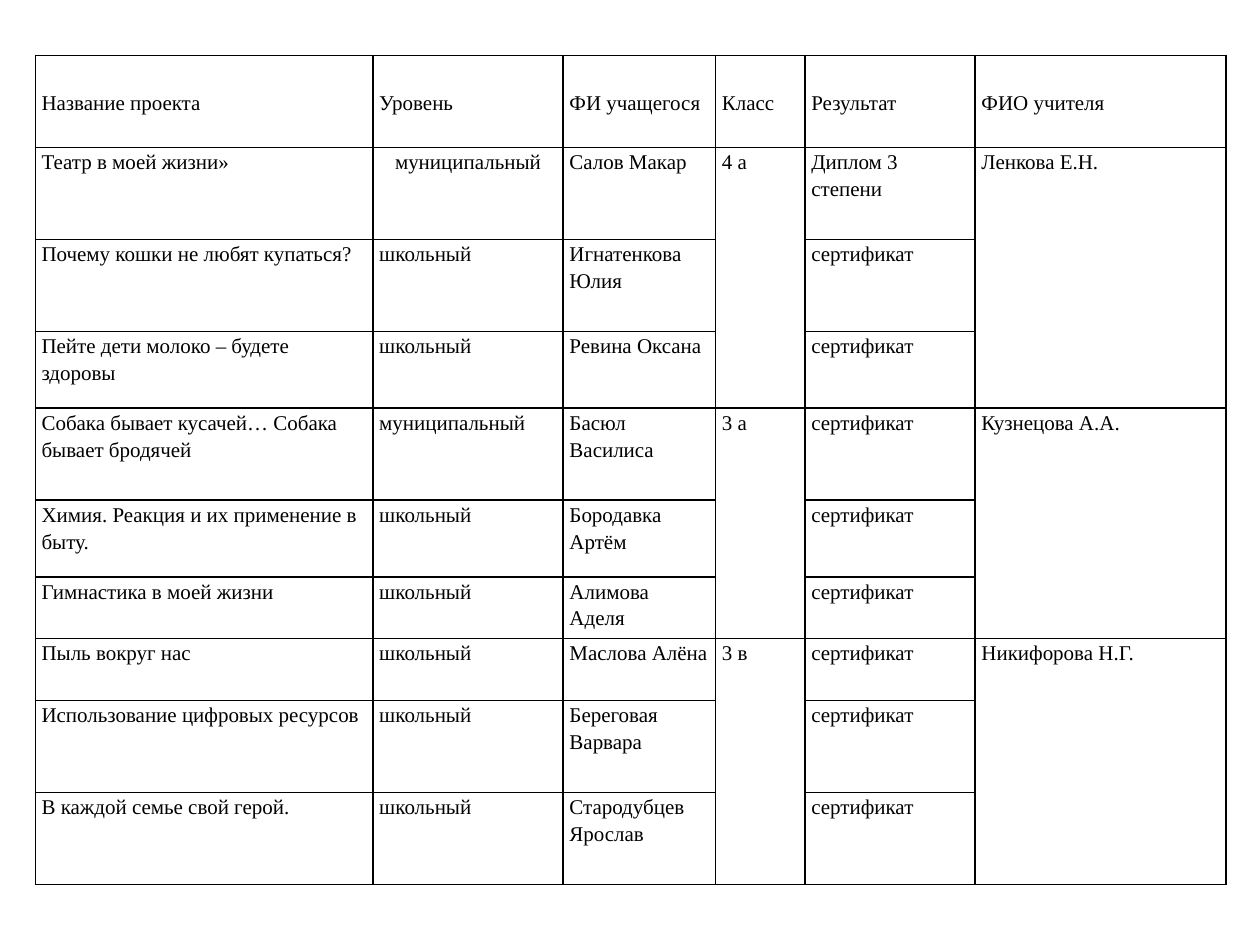
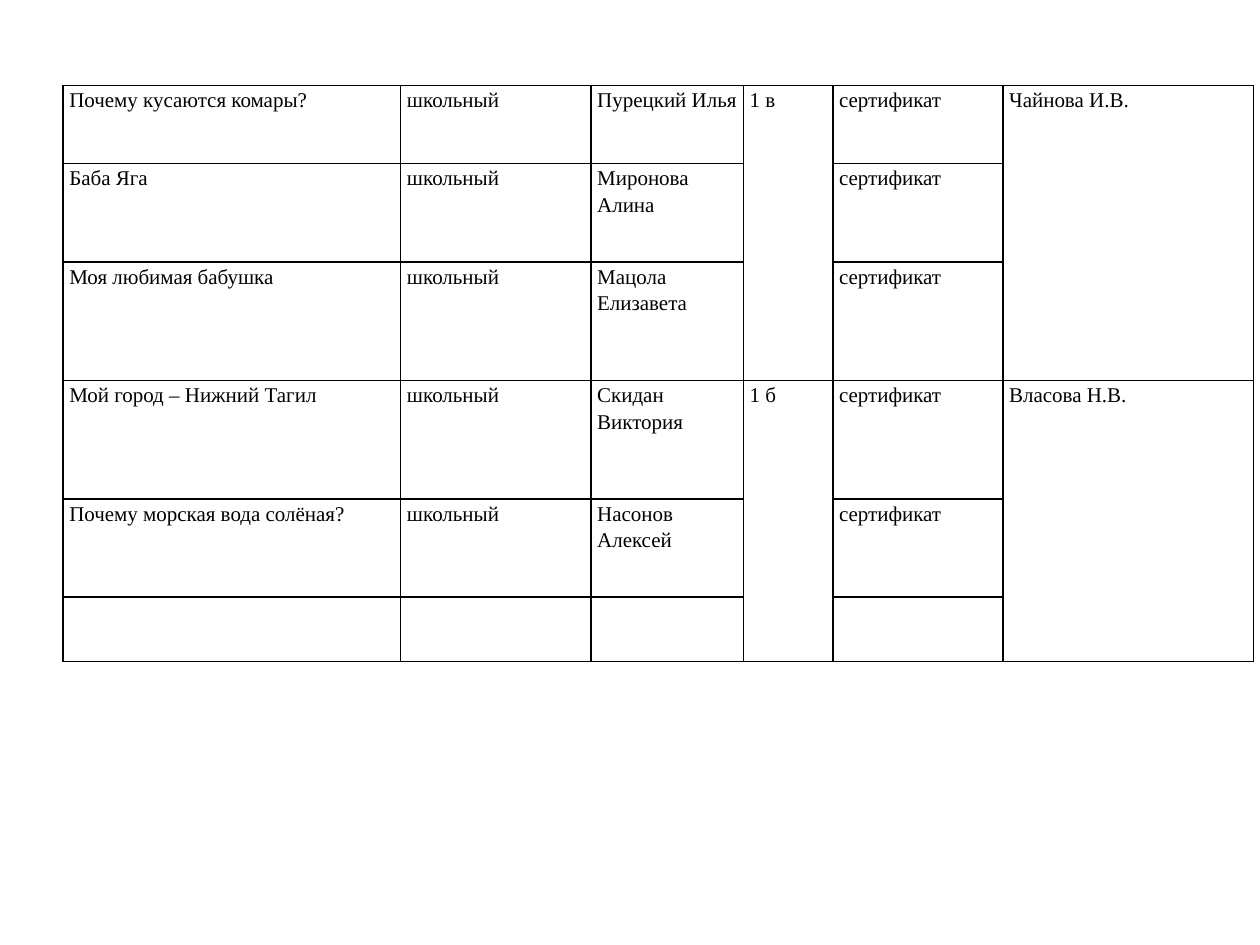
from lxml.etree import SubElement
from pptx import Presentation
from pptx.dml.color import RGBColor
from pptx.enum.text import MSO_ANCHOR, PP_ALIGN
from pptx.oxml.ns import qn
from pptx.util import Inches, Pt

COLORS = {"text": "000000", "border": "000000"}
FONT = "Times New Roman"
COL_WIDTHS = [2.68, 1.51, 1.21, 0.71, 1.35, 1.99]
CLASS_COL, TEACHER_COL = 3, 5
TALL, MEDIUM, SHORT = 0.73, 0.61, 0.49
HEADER = ["Название проекта", "Уровень", "ФИ учащегося", "Класс", "Результат", "ФИО учителя"]
SCHOOL, CITY, CERT = "школьный", "муниципальный", "сертификат"

OLDER_CLASSES = [
    ("4 а", "Ленкова Е.Н.", [
        (TALL, "Театр в моей жизни»", CITY, "Салов Макар", "Диплом 3 степени"),
        (TALL, "Почему кошки не любят купаться?", SCHOOL, "Игнатенкова Юлия", CERT),
        (MEDIUM, "Пейте дети молоко – будете здоровы", SCHOOL, "Ревина Оксана", CERT),
    ]),
    ("3 а", "Кузнецова А.А.", [
        (TALL, "Собака бывает кусачей… Собака бывает бродячей", CITY, "Басюл Василиса", CERT),
        (MEDIUM, "Химия. Реакция и их применение в быту.", SCHOOL, "Бородавка Артём", CERT),
        (SHORT, "Гимнастика в моей жизни", SCHOOL, "Алимова Аделя", CERT),
    ]),
    ("3 в", "Никифорова Н.Г.", [
        (SHORT, "Пыль вокруг нас", SCHOOL, "Маслова Алёна", CERT),
        (TALL, "Использование цифровых ресурсов", SCHOOL, "Береговая Варвара", CERT),
        (TALL, "В каждой семье свой герой.", SCHOOL, "Стародубцев Ярослав", CERT),
    ]),
]
FIRST_CLASSES = [
    ("1 в", "Чайнова И.В.", [
        (0.62, "Почему кусаются комары?", SCHOOL, "Пурецкий Илья", CERT),
        (0.78, "Баба Яга", SCHOOL, "Миронова Алина", CERT),
        (0.94, "Моя любимая бабушка", SCHOOL, "Мацола Елизавета", CERT),
    ]),
    ("1 б", "Власова Н.В.", [
        (0.94, "Мой город – Нижний Тагил", SCHOOL, "Скидан Виктория", CERT),
        (0.78, "Почему морская вода солёная?", SCHOOL, "Насонов Алексей", CERT),
        (0.51, "", "", "", ""),
    ]),
]


def style_cell(cell):
    """Give a cell thin black borders, no fill and narrow margins."""
    tc_pr = cell._tc.get_or_add_tcPr()
    for side in ("lnL", "lnR", "lnT", "lnB"):
        ln = SubElement(tc_pr, qn(f"a:{side}"), w=str(Pt(1)))
        fill = SubElement(ln, qn("a:solidFill"))
        SubElement(fill, qn("a:srgbClr"), val=COLORS["border"])
    cell.fill.background()
    cell.margin_left = cell.margin_right = Inches(0.05)
    cell.margin_top = cell.margin_bottom = 0


def write_cell(cell, text):
    """Write one paragraph of table text."""
    if not text:
        return
    p = cell.text_frame.paragraphs[0]
    p.text = text
    p.line_spacing = 1.15
    p.space_after = Pt(10)
    font = p.runs[0].font
    font.name = FONT
    font.size = Pt(12)
    font.color.rgb = RGBColor.from_string(COLORS["text"])


def add_results_table(slide, left, top, groups, header=None):
    """Add a results table whose class and teacher cells span each group."""
    heights = [TALL] if header else []
    heights += [row[0] for _, _, rows in groups for row in rows]
    table = slide.shapes.add_table(
        len(heights), len(COL_WIDTHS), Inches(left), Inches(top),
        Inches(sum(COL_WIDTHS)), Inches(sum(heights))).table
    table.first_row = table.horz_banding = False
    for column, width in zip(table.columns, COL_WIDTHS):
        column.width = Inches(width)
    for row, height in zip(table.rows, heights):
        row.height = Inches(height)
    for cell in table.iter_cells():
        style_cell(cell)

    start = 0
    if header:
        for col, title in enumerate(header):
            write_cell(table.cell(0, col), title)
            table.cell(0, col).vertical_anchor = MSO_ANCHOR.MIDDLE
        start = 1
    for class_name, teacher, rows in groups:
        for r, (_, project, level, student, result) in enumerate(rows, start):
            for col, text in zip((0, 1, 2, 4), (project, level, student, result)):
                write_cell(table.cell(r, col), text)
        end = start + len(rows) - 1
        for col, text in ((CLASS_COL, class_name), (TEACHER_COL, teacher)):
            table.cell(start, col).merge(table.cell(end, col))
            write_cell(table.cell(start, col), text)
        start = end + 1
    return table


def main():
    """Build both slides and save the deck."""
    prs = Presentation()
    prs.slide_width, prs.slide_height = Inches(10), Inches(7.5)
    blank = prs.slide_layouts[6]
    table = add_results_table(prs.slides.add_slide(blank), 0.28, 0.44, OLDER_CLASSES, HEADER)
    table.cell(1, 1).text_frame.paragraphs[0].alignment = PP_ALIGN.CENTER
    add_results_table(prs.slides.add_slide(blank), 0.5, 0.68, FIRST_CLASSES)
    prs.save("out.pptx")


if __name__ == "__main__":
    main()
